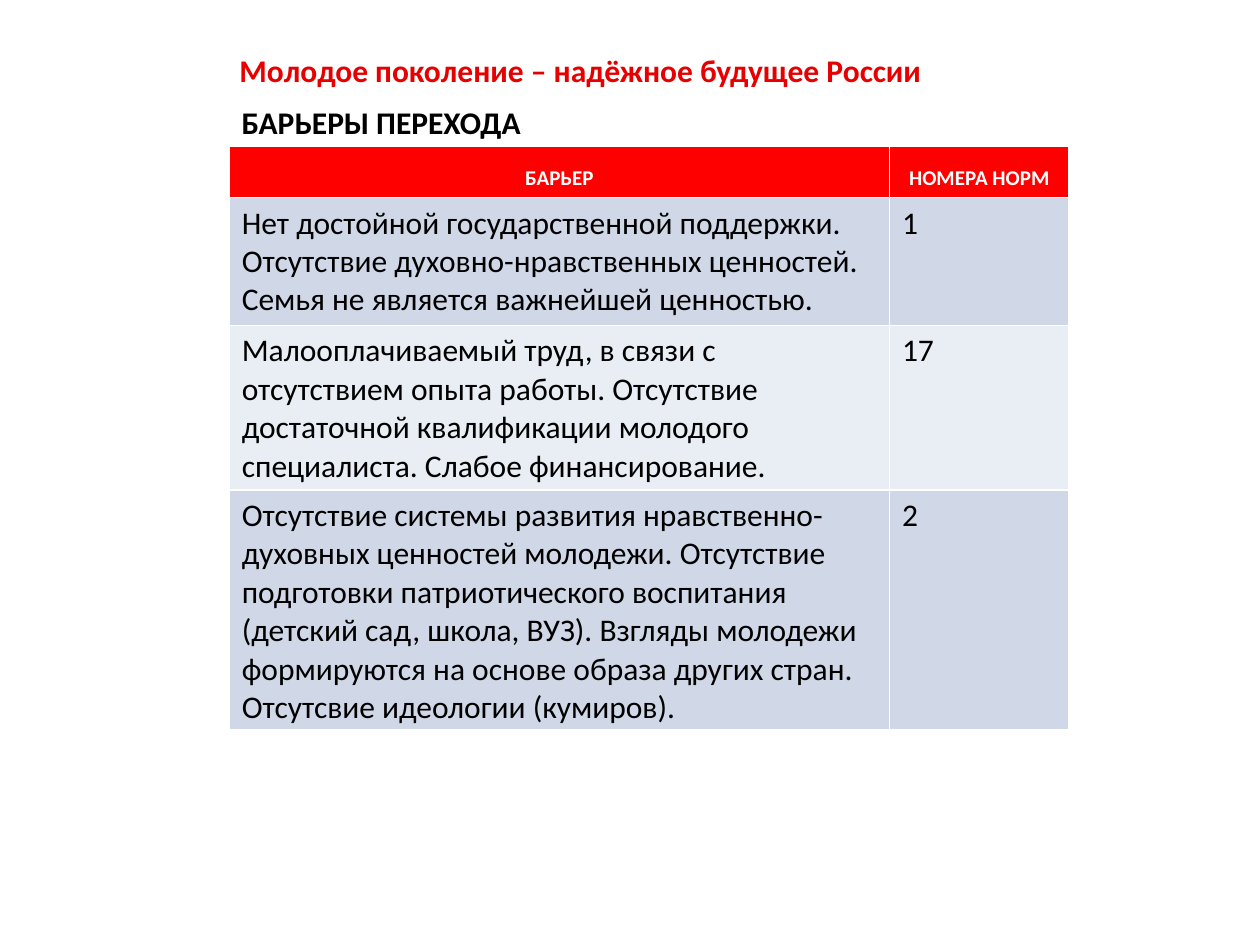
from pptx import Presentation
from pptx.dml.color import RGBColor
from pptx.enum.text import MSO_ANCHOR, MSO_AUTO_SIZE, PP_ALIGN
from pptx.util import Pt

LEFT, CENTER = PP_ALIGN.LEFT, PP_ALIGN.CENTER
MIDDLE = MSO_ANCHOR.MIDDLE
NO_AUTOFIT, GROW = MSO_AUTO_SIZE.NONE, MSO_AUTO_SIZE.SHAPE_TO_FIT_TEXT

WHITE = RGBColor(0xFF, 0xFF, 0xFF)
BLACK = RGBColor(0x00, 0x00, 0x00)
TITLE_RED = RGBColor(0xE6, 0x00, 0x00)
HEADER_RED = RGBColor(0xFF, 0x00, 0x00)
BANDS = (RGBColor(0xD0, 0xD8, 0xE8), RGBColor(0xE9, 0xED, 0xF4))

FONT = "Calibri"
TITLE_ONLY_LAYOUT = 5

HEADERS = ("БАРЬЕР", "НОМЕРА НОРМ")
BARRIERS = (
    ("Нет достойной государственной поддержки. Отсутствие духовно-нравственных "
     "ценностей. Семья не является важнейшей ценностью.", "1"),
    ("Малооплачиваемый труд, в связи с отсутствием опыта работы. Отсутствие "
     "достаточной квалификации молодого специалиста. Слабое финансирование.", "17"),
    ("Отсутствие системы развития нравственно-духовных ценностей молодежи. "
     "Отсутствие подготовки патриотического воспитания (детский сад, школа, ВУЗ). "
     "Взгляды молодежи формируются на основе образа других стран. "
     "Отсутсвие идеологии (кумиров).", "2"),
)
COLUMN_SHARES = (0.786, 0.214)
ROW_HEIGHTS = (29.5, 73, 94, 136)


def write(text_frame, text, color, size=18, bold=False, alignment=LEFT):
    paragraph = text_frame.paragraphs[0]
    paragraph.alignment = alignment
    run = paragraph.add_run()
    run.text = text
    run.font.name = FONT
    run.font.size = Pt(size)
    run.font.bold = bold
    run.font.color.rgb = color
    return paragraph


def place_title(slide, left, top, width, height):
    title = slide.shapes.title
    title.left, title.top = Pt(left), Pt(top)
    title.width, title.height = Pt(width), Pt(height)
    text_frame = title.text_frame
    text_frame.auto_size = NO_AUTOFIT
    text_frame.vertical_anchor = MIDDLE
    write(text_frame, "Молодое поколение – надёжное будущее России", TITLE_RED, bold=True)


def add_heading(slide, left, top, width, height):
    heading = slide.shapes.add_textbox(Pt(left), Pt(top), Pt(width), Pt(height))
    text_frame = heading.text_frame
    text_frame.word_wrap = False
    text_frame.auto_size = GROW
    write(text_frame, "БАРЬЕРЫ ПЕРЕХОДА", BLACK, bold=True)


def fill_cell(cell, color):
    cell.fill.solid()
    cell.fill.fore_color.rgb = color


def add_barrier_table(slide, left, top, width):
    frame = slide.shapes.add_table(
        len(ROW_HEIGHTS), len(HEADERS),
        Pt(left), Pt(top), Pt(width), Pt(sum(ROW_HEIGHTS)))
    table = frame.table
    for column, share in zip(table.columns, COLUMN_SHARES):
        column.width = Pt(width * share)
    for row, height in zip(table.rows, ROW_HEIGHTS):
        row.height = Pt(height)

    for cell, text in zip(table.rows[0].cells, HEADERS):
        fill_cell(cell, HEADER_RED)
        paragraph = write(cell.text_frame, text, WHITE, 12, True, CENTER)
        paragraph.line_spacing = 1.5
    for index, barrier in enumerate(BARRIERS):
        for cell, text in zip(table.rows[index + 1].cells, barrier):
            fill_cell(cell, BANDS[index % 2])
            write(cell.text_frame, text, BLACK)


def main():
    presentation = Presentation()
    presentation.slide_width, presentation.slide_height = Pt(720), Pt(540)
    slide = presentation.slides.add_slide(presentation.slide_layouts[TITLE_ONLY_LAYOUT])
    place_title(slide, 129.6, 26, 515, 28)
    add_heading(slide, 131, 55.4, 175.7, 29)
    add_barrier_table(slide, 131, 83.5, 480)
    presentation.save("out.pptx")


if __name__ == "__main__":
    main()
